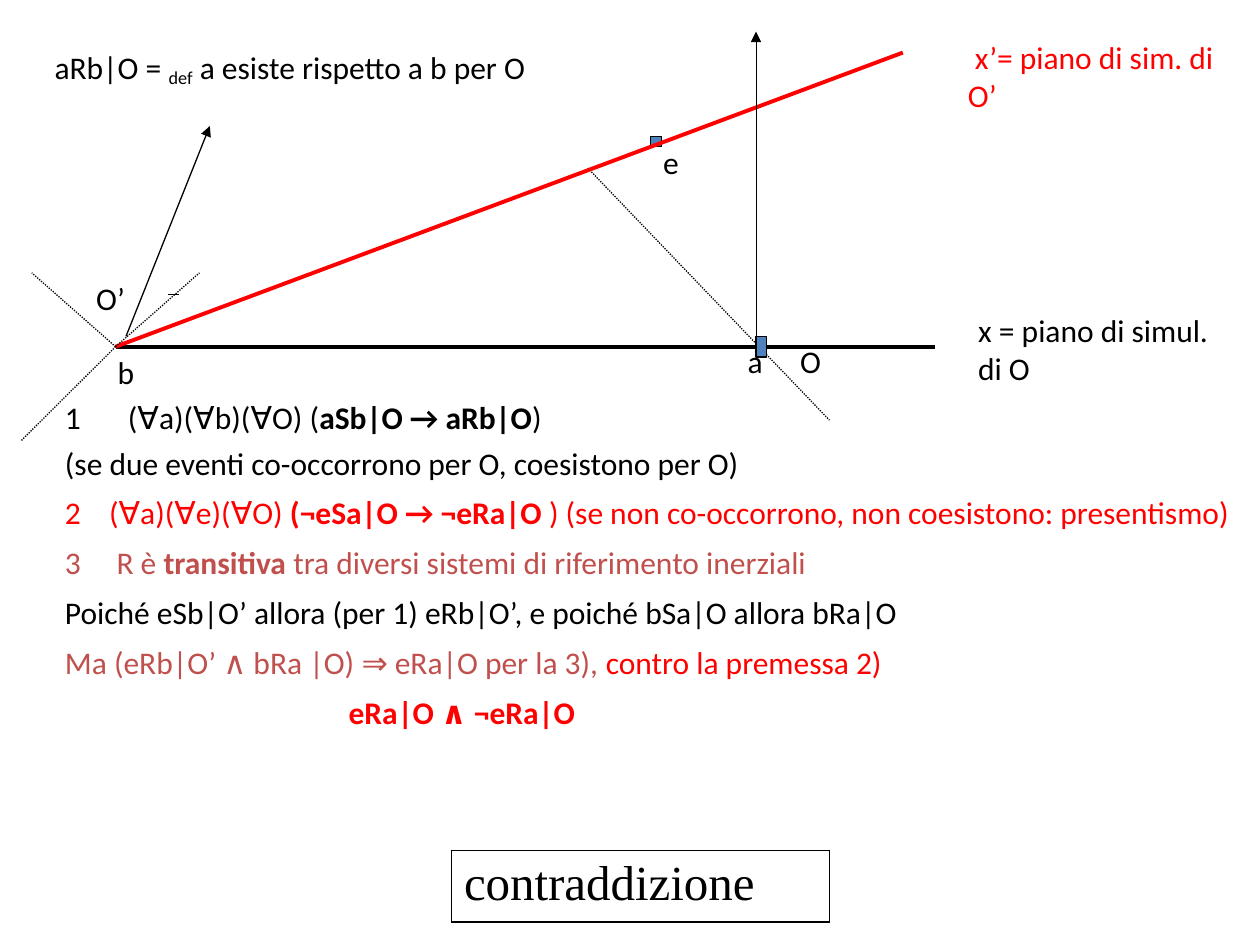
from dataclasses import dataclass

from lxml import etree
from pptx import Presentation
from pptx.dml.color import RGBColor
from pptx.enum.dml import MSO_LINE
from pptx.enum.shapes import MSO_CONNECTOR, MSO_SHAPE
from pptx.enum.text import MSO_AUTO_SIZE
from pptx.oxml.ns import qn
from pptx.util import Cm, Pt

STRAIGHT = MSO_CONNECTOR.STRAIGHT
RECT = MSO_SHAPE.RECTANGLE
DOTTED = MSO_LINE.ROUND_DOT
GROW = MSO_AUTO_SIZE.SHAPE_TO_FIT_TEXT
LEFT_SIDE = 1


@dataclass(frozen=True)
class Theme:
    """Colours, fonts and type sizes of the slide."""
    ink: str = "000000"
    red: str = "FF0000"
    brick: str = "C0504D"
    blue: str = "4F81BD"
    font: str = "Calibri"
    serif: str = "Times New Roman"
    body: int = 18
    verdict: int = 28
    thin: float = 0.75
    thick: float = 2.25


T = Theme()


def add_run(p, text, color=T.ink, bold=False, font=T.font, size=T.body):
    """Append one formatted run to a paragraph."""
    r = p.add_run()
    r.text = text
    r.font.name, r.font.size, r.font.bold = font, Pt(size), bold
    r.font.color.rgb = RGBColor.from_string(color)
    return r


def add_text(s, x, y, w, h):
    """Add a wrapping text box and return its text frame."""
    tf = s.shapes.add_textbox(Cm(x), Cm(y), Cm(w), Cm(h)).text_frame
    tf.word_wrap = True
    tf.auto_size = GROW
    return tf


def add_line(s, start, end, color=T.ink, width=T.thin, dash=None, arrow=False):
    """Add a straight connector, dotted or with an arrowhead if asked."""
    x1, y1, x2, y2 = (Cm(v) for v in (*start, *end))
    c = s.shapes.add_connector(STRAIGHT, x1, y1, x2, y2)
    c.line.color.rgb = RGBColor.from_string(color)
    c.line.width = Pt(width)
    if dash:
        c.line.dash_style = dash
    if arrow:
        etree.SubElement(c.line._get_or_add_ln(), qn("a:tailEnd"), type="triangle")
    etree.SubElement(c._element.spPr, qn("a:effectLst"))
    return c


def add_marker(s, x, y, w, h):
    """Add the small blue rectangle that marks an event."""
    sp = s.shapes.add_shape(RECT, Cm(x), Cm(y), Cm(w), Cm(h))
    sp.shadow.inherit = False
    sp.fill.solid()
    sp.fill.fore_color.rgb = RGBColor.from_string(T.blue)
    sp.line.color.rgb = RGBColor.from_string(T.ink)
    sp.line.width = Pt(T.thin)
    return sp


def build_diagram(s, left, top):
    """Draw the two planes of simultaneity, the observers and the events."""
    def at(x, y):
        return left + x, top + y

    b, a = at(1.91, 6.35), at(14.82, 6.35)
    add_line(s, b, at(18.42, 6.35), width=T.thick)
    add_line(s, at(11.43, 2.75), at(16.3, 7.83), dash=DOTTED)
    event_a = add_marker(s, *at(14.82, 6.14), 0.21, 0.42)
    add_marker(s, *at(12.7, 2.11), 0.21, 0.21)
    add_line(s, b, at(17.78, 0.42), T.red, T.thick)
    for end in ((0.22, 4.86), (0, 8.25), (3.6, 4.86)):
        add_line(s, b, at(*end), dash=DOTTED)
    add_line(s, at(2.97, 5.29), at(3.18, 5.29))
    observer = add_line(s, a, at(14.82, 0), width=0.5, arrow=True)
    observer.begin_connect(event_a, LEFT_SIDE)
    add_line(s, at(2.12, 6.14), at(3.81, 1.9), arrow=True)

    labels = (
        ("a", 14.4, 6.14, 1.7, 1.27, T.ink),
        ("e", 12.7, 2.11, 1.06, 1.27, T.ink),
        ("O", 15.46, 6.14, 1.48, 1.27, T.ink),
        ("b", 1.7, 6.35, 0.85, 1.27, T.ink),
        ("O’", 1.27, 4.86, 1.48, 1.27, T.ink),
        (" x’= piano di sim. di O’", 18.84, 0, 6.15, 2.28, T.red),
        ("x = piano di simul. di O", 19.05, 5.5, 5.29, 2.28, T.ink),
    )
    for text, x, y, w, h, color in labels:
        add_run(add_text(s, *at(x, y), w, h).paragraphs[0], text, color)


def build_definition(s, left, top, width, height):
    """Write the definition of relative existence."""
    p = add_text(s, left, top, width, height).paragraphs[0]
    add_run(p, "aRb|O = ")
    sub = add_run(p, "def")
    sub.font._element.set("baseline", "-16000")
    add_run(p, " a esiste rispetto a b per O")


def build_proof(s, left, top, width, height):
    """Write the premises and the steps; each has margin, indent, spacing, runs."""
    steps = (
        (1.27, -1.27, 0.8, (("(∀a)(∀b)(∀O) (", T.ink, False),
                            ("aSb|O → aRb|O", T.ink, True),
                            (")", T.ink, False))),
        (1.27, -1.27, 0.8, (("(se due eventi co-occorrono per O, coesistono per O)",
                             T.ink, False),)),
        (0.89, -0.89, 0.9, (("2\t(∀a)(∀e)(∀O) ", T.red, False),
                            ("(¬eSa|O → ¬eRa|O ", T.red, True),
                            (") (se non co-occorrono, non coesistono: presentismo)",
                             T.red, False))),
        (1.04, -1.04, 0.9, (("3\tR è ", T.brick, False),
                            ("transitiva", T.brick, True),
                            (" tra diversi sistemi di riferimento inerziali",
                             T.brick, False))),
        (1.27, -1.27, 0.9, (("Poiché eSb|O’ allora (per 1) eRb|O’, "
                             "e poiché bSa|O allora bRa|O", T.ink, False),)),
        (1.27, -1.27, 0.9, (("Ma (eRb|O’ ∧ bRa |O) ⇒ eRa|O per la 3), ",
                             T.brick, False),
                            ("contro la premessa 2)", T.red, False))),
        (5.72, 0, 0.9, (("eRa|O ∧ ¬eRa|O", T.red, True),)),
    )
    tf = add_text(s, left, top, width, height)
    for i, (margin, indent, spacing, runs) in enumerate(steps):
        p = tf.add_paragraph() if i else tf.paragraphs[0]
        p.line_spacing = spacing
        p.space_before = Pt(T.body / 2 if i else 0)
        pPr = p._p.get_or_add_pPr()
        pPr.set("marL", str(Cm(margin)))
        pPr.set("indent", str(Cm(indent)))
        if i == 0:
            etree.SubElement(pPr, qn("a:buAutoNum"), type="arabicPlain")
        for run in runs:
            add_run(p, *run)


def build_verdict(s, left, top, width, height):
    """Place the bordered one-cell table with the conclusion."""
    table = s.shapes.add_table(1, 1, Cm(left), Cm(top), Cm(width), Cm(height)).table
    table.first_row = table.horz_banding = False
    cell = table.cell(0, 0)
    cell.fill.background()
    tcPr = cell._tc.get_or_add_tcPr()
    for i, side in enumerate("LRTB"):
        ln = etree.Element(qn(f"a:ln{side}"), w=str(Pt(1)))
        fill = etree.SubElement(ln, qn("a:solidFill"))
        etree.SubElement(fill, qn("a:srgbClr"), val=T.ink)
        tcPr.insert(i, ln)
    add_run(cell.text_frame.paragraphs[0], "contraddizione",
            font=T.serif, size=T.verdict)


def main():
    """Build the slide and save it."""
    prs = Presentation()
    prs.slide_width, prs.slide_height = Cm(25.4), Cm(19.05)
    s = prs.slides.add_slide(prs.slide_layouts[6])
    build_diagram(s, 0.42, 0.64)
    build_proof(s, 1.06, 8.05, 24.34, 10.39)
    build_verdict(s, 9.1, 17.14, 7.62, 1.45)
    build_definition(s, 0.85, 0.85, 13.12, 1.27)
    prs.save("out.pptx")


if __name__ == "__main__":
    main()
